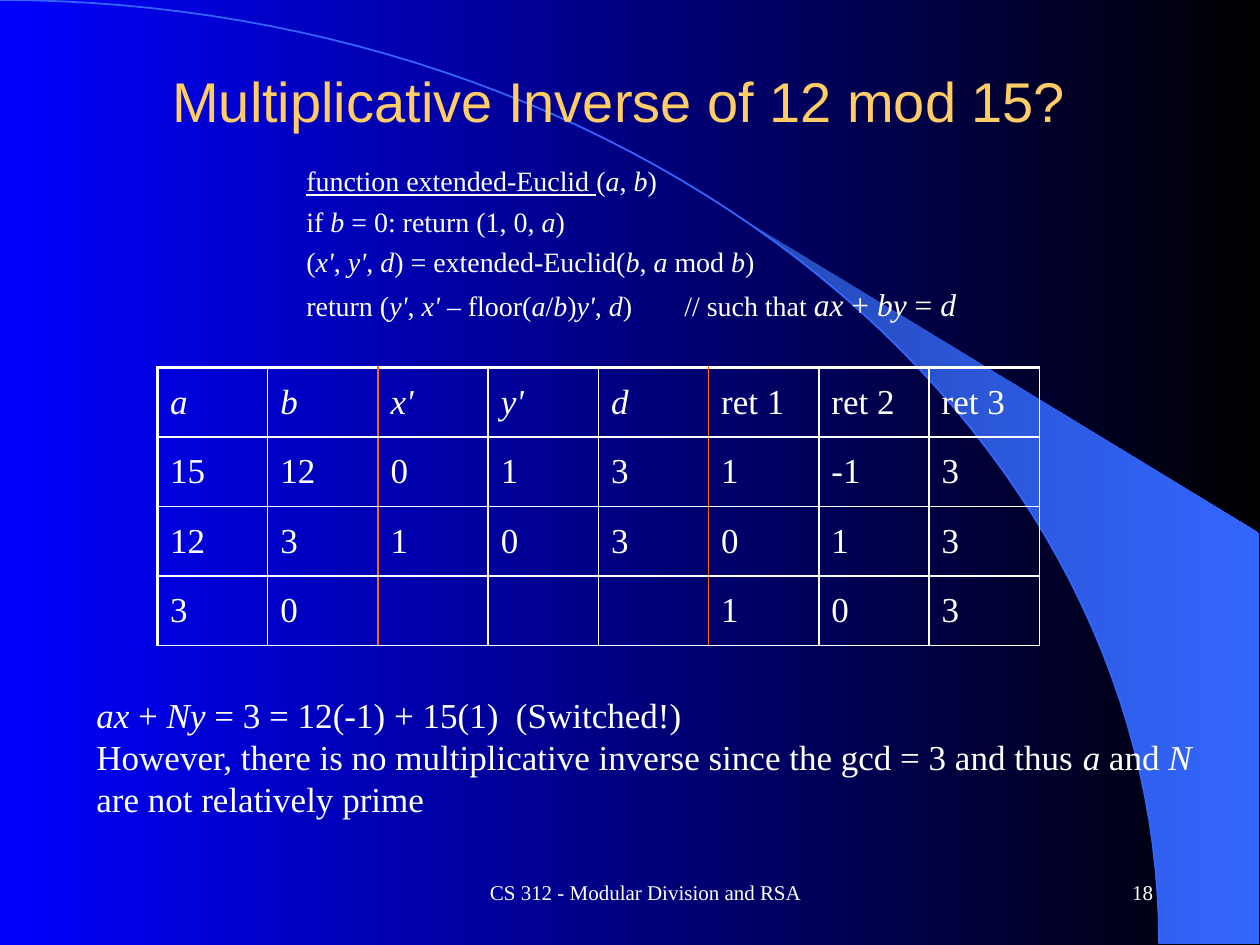
from dataclasses import dataclass
from math import cos, radians, sin

from lxml import etree
from pptx import Presentation
from pptx.dml.color import RGBColor
from pptx.enum.text import MSO_ANCHOR, PP_ALIGN
from pptx.oxml.ns import qn
from pptx.util import Pt

MID, TOP = MSO_ANCHOR.MIDDLE, MSO_ANCHOR.TOP
LEFT, MIDST, RIGHT = PP_ALIGN.LEFT, PP_ALIGN.CENTER, PP_ALIGN.RIGHT
WHITE = RGBColor(0xFF, 0xFF, 0xFF)
BLACK = RGBColor(0, 0, 0)
BLUE = RGBColor(0, 0, 0xFF)
GOLD = RGBColor(0xFF, 0xCC, 0x66)
ORANGE = RGBColor(0xFF, 0x66, 0)
DUSK = RGBColor(0x24, 0x49, 0xB6)
SKY = RGBColor(0x33, 0x66, 0xFF)
SERIF, SANS = "Times New Roman", "Arial"


@dataclass
class Span:
    text: str
    size: float
    under: bool = False


@dataclass
class Block:
    box: tuple
    lines: list
    align: int = LEFT
    anchor: int = TOP
    gap: float = 0
    indent: float = 0


def write(para, spans: list, font: str = SERIF, color: RGBColor = WHITE) -> None:
    for span in spans:
        for i, part in enumerate(span.text.split("|")):
            if part:
                run = para.add_run()
                run.text = part
                run.font.size = Pt(span.size)
                run.font.name = font
                run.font.color.rgb = color
                run.font.italic = i % 2 == 1
                run.font.underline = span.under


def place(slide, block: Block) -> None:
    frame = slide.shapes.add_textbox(*map(Pt, block.box)).text_frame
    frame.word_wrap = True
    frame.vertical_anchor = block.anchor
    for i, spans in enumerate(block.lines):
        para = frame.add_paragraph() if i else frame.paragraphs[0]
        para.alignment = block.align
        para.space_before = Pt(block.gap)
        if block.indent:
            para._p.get_or_add_pPr().set("marL", str(Pt(block.indent)))
        write(para, spans)


def arc(start: float, end: float, steps: int = 60) -> list:
    turns = [radians(start + (end - start) * i / steps) for i in range(steps + 1)]
    return [(Pt(662.4 * sin(t)), Pt(539.3 * (1 - cos(t)))) for t in turns]


def trace(slide, points: list, close: bool):
    pen = slide.shapes.build_freeform(*points[0])
    pen.add_line_segments(points[1:], close=close)
    shape = pen.convert_to_shape()
    shape.shadow.inherit = False
    return shape


def blend(fill, first: RGBColor, last: RGBColor) -> None:
    fill.gradient()
    fill.gradient_angle = 0
    for stop, color in zip(fill.gradient_stops, (first, last)):
        stop.color.rgb = color


def edge(cell, row: int, col: int) -> None:
    props = cell._tc.get_or_add_tcPr()
    sides = (
        ("a:lnL", ORANGE if col in (2, 5) else WHITE, 1 if col else 2.25),
        ("a:lnR", ORANGE if col in (1, 4) else WHITE, 1),
        ("a:lnT", WHITE, 1 if row else 2.25),
        ("a:lnB", WHITE, 1),
    )
    for i, (tag, color, width) in enumerate(sides):
        line = etree.Element(qn(tag), w=str(Pt(width)))
        fill = etree.SubElement(line, qn("a:solidFill"))
        etree.SubElement(fill, qn("a:srgbClr"), val=str(color))
        props.insert(i, line)


def grid(slide, rows: list) -> None:
    size = len(rows), len(rows[0])
    table = slide.shapes.add_table(*size, Pt(90), Pt(210), Pt(504), Pt(159)).table
    table.first_row = table.horz_banding = False
    for r, row in enumerate(rows):
        for c, text in enumerate(row):
            cell = table.cell(r, c)
            cell.fill.background()
            edge(cell, r, c)
            cell.vertical_anchor = MID
            para = cell.text_frame.paragraphs[0]
            if r in (0, 3) or c < 2:
                para.space_before = Pt(4)
            write(para, [Span(text, 20)])


CODE = [
    [Span("function extended-Euclid ", 16, True), Span("(|a|, |b|)", 16)],
    [Span("if |b| = 0: return (1, 0, |a|)", 16)],
    [Span("(|x'|, |y'|, |d|) = extended-Euclid(|b|, |a |mod |b|)", 16)],
    [
        Span("return (|y'|, |x' |– floor(|a|/|b|)|y'|, |d|) \t// such that ", 16),
        Span("|ax |+ |by |= |d|", 18),
    ],
]
NOTES = [
    [Span("|ax |+ |Ny |= 3 = 12(-1) + 15(1)  (Switched!)", 20)],
    [
        Span(
            "However, there is no multiplicative inverse since the gcd = 3 "
            "and thus |a| and |N| are not relatively prime",
            20,
        )
    ],
]
ROWS = [
    ["|a|", "|b|", "|x'|", "|y'|", "|d|", "ret 1", "ret 2", "ret 3"],
    ["15", "12", "0", "1", "3", "1", "-1", "3"],
    ["12", "3", "1", "0", "3", "0", "1", "3"],
    ["3", "0", "", "", "", "1", "0", "3"],
]
BLOCKS = [
    Block((228, 492, 282, 36), [[Span("CS 312 - Modular Division and RSA", 12)]], MIDST, MID),
    Block((516, 492, 150, 36), [[Span("18", 12)]], RIGHT, MID),
    Block((132, 90, 498, 99), CODE, gap=4, indent=36),
    Block((48, 392.5, 654, 80), NOTES),
]


def main() -> None:
    deck = Presentation()
    deck.slide_width, deck.slide_height = Pt(720), Pt(540)
    slide = deck.slides.add_slide(deck.slide_layouts[5])
    blend(slide.background.fill, BLUE, BLACK)

    corner = [(Pt(719.3), Pt(539.3)), (Pt(719.3), Pt(304.6))]
    beam = trace(slide, corner + arc(39.8, 90), True)
    blend(beam.fill, DUSK, SKY)
    beam.line.fill.background()
    curve = trace(slide, arc(0, 90), False)
    curve.fill.background()
    curve.line.color.rgb = SKY
    curve.line.width = Pt(1)

    title = slide.shapes.title
    title.left, title.top, title.width, title.height = map(Pt, (48, 24, 612, 66))
    title.text_frame.vertical_anchor = MID
    para = title.text_frame.paragraphs[0]
    para.alignment = MIDST
    write(para, [Span("Multiplicative Inverse of 12 mod 15?", 32)], SANS, GOLD)
    slide.shapes._spTree.append(title._element)

    grid(slide, ROWS)
    for block in BLOCKS:
        place(slide, block)
    deck.save("out.pptx")


if __name__ == "__main__":
    main()
